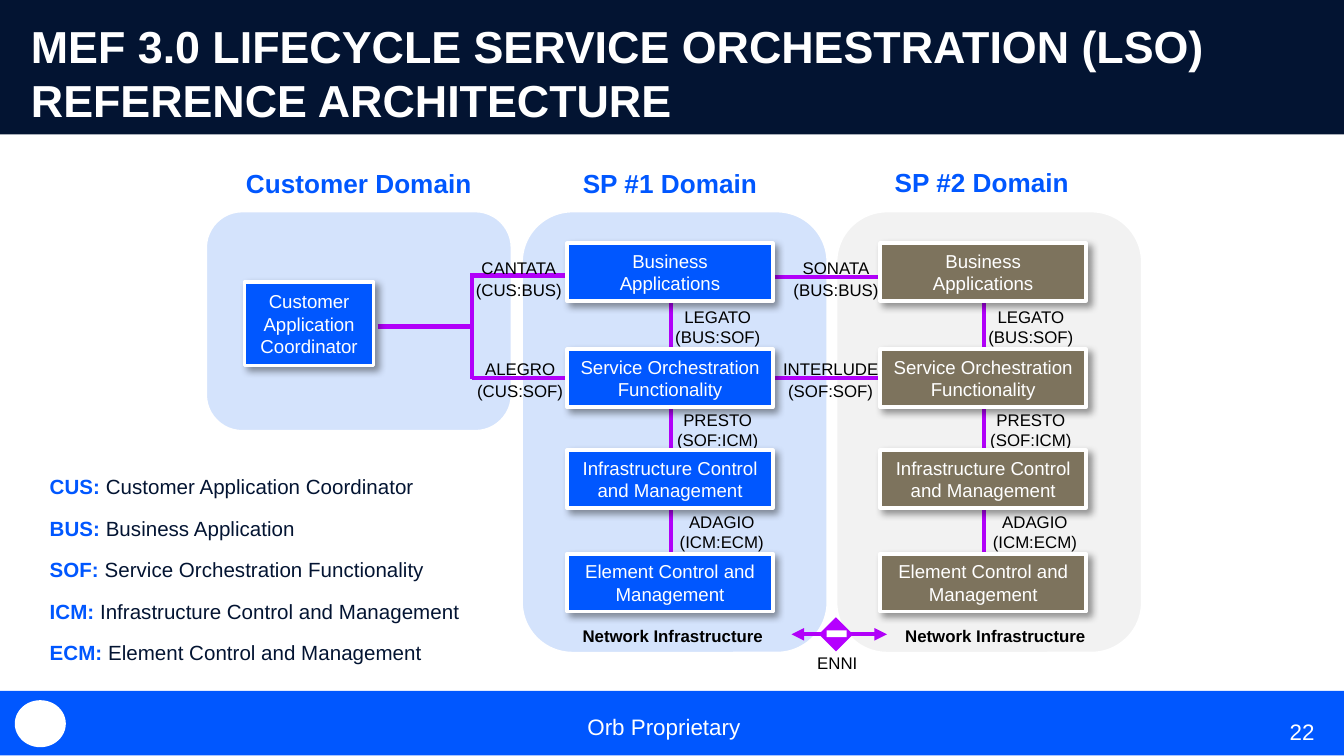
"""Build the LSO reference architecture slide."""
from lxml import etree
from pptx import Presentation
from pptx import util as u
from pptx.dml.color import RGBColor
from pptx.enum import shapes, text
from pptx.oxml import ns

BLUE, PALE, GREY, TAUPE = "0057FF", "D4E3FC", "F2F2F2", "7D735D"
NAVY, PURPLE, WHITE, BLACK = "031432", "B100F9", "FFFFFF", "000000"
LEFT, CENTER, RIGHT = text.PP_ALIGN.LEFT, text.PP_ALIGN.CENTER, text.PP_ALIGN.RIGHT
RECT, ROUND, OVAL = (shapes.MSO_SHAPE.RECTANGLE, shapes.MSO_SHAPE.ROUNDED_RECTANGLE,
                     shapes.MSO_SHAPE.OVAL)

TITLE = "MEF 3.0 LIFECYCLE SERVICE ORCHESTRATION (LSO) REFERENCE ARCHITECTURE"
FOOTER, PAGE = "Orb Proprietary", "22"
PANELS = [(6.22, 3.29, GREY), (3.88, 3.29, PALE), (1.53, 1.64, PALE)]
HEADINGS = [("Customer Domain", 1.64, 1.2, 2.06), ("SP #1 Domain", 4.1, 1.2, 1.77),
            ("SP #2 Domain", 6.42, 1.19, 1.77)]
PROVIDERS = [(4.22, BLUE), (6.55, TAUPE)]
LAYERS = [("Business Applications", 1.81), ("Service Orchestration Functionality", 2.6),
          ("Infrastructure Control and Management", 3.35),
          ("Element Control and Management", 4.12)]
VERTICAL_APIS = [("LEGATO", "(BUS:SOF)", 0.67, 2.23), ("PRESTO", "(SOF:ICM)", 0.67, 3),
                 ("ADAGIO", "(ICM:ECM)", 0.7, 3.76)]
CROSS_APIS = [("CANTATA", "(CUS:BUS)", 3.41, 1.85, 0.9), ("ALEGRO", "(CUS:SOF)", 3.42, 2.6, 0.9),
              ("SONATA", "(BUS:BUS)", 5.77, 1.85, 0.9),
              ("INTERLUDE", "(SOF:SOF)", 5.69, 2.6, 0.98)]
LINKS = [(5.75, 2.06, 6.57, 2.06), (5.75, 2.81, 6.58, 2.81), (2.81, 2.43, 3.52, 2.43),
         (3.51, 2.03, 3.51, 2.82), (3.5, 2.05, 4.21, 2.05), (3.51, 2.81, 4.22, 2.81)]
NETWORKS = [4.12, 6.52]
LEGEND = [("CUS: ", "Customer Application Coordinator"), ("BUS: ", "Business Application"),
          ("SOF: ", "Service Orchestration Functionality"),
          ("ICM: ", "Infrastructure Control and Management"),
          ("ECM: ", "Element Control and Management")]


def rgb(value):
    """Turn a hex string into a colour."""
    return RGBColor.from_string(value)


def add_run(p, words, size, color, bold=False):
    """Add one formatted run."""
    r = p.add_run()
    r.text = words
    r.font.color.rgb = rgb(color)
    for name, value in {"name": "Arial", "size": u.Pt(size), "bold": bold}.items():
        setattr(r.font, name, value)


def write(s, lines, size, color, bold=False, align=CENTER, anchor=text.MSO_ANCHOR.TOP,
          insets=(0.1, 0.05, 0.1, 0.05), **spacing):
    """Write lines, each a string or a list of (words, colour, bold) runs."""
    tf = s.text_frame
    tf.word_wrap, tf.vertical_anchor = True, anchor
    for side, gap in zip(("left", "top", "right", "bottom"), insets):
        setattr(tf, f"margin_{side}", u.Inches(gap))
    for i, line in enumerate(lines):
        p = tf.add_paragraph() if i else tf.paragraphs[0]
        for name, value in {"alignment": align, **spacing}.items():
            setattr(p, name, value)
        for run in [(line, color, bold)] if isinstance(line, str) else line:
            add_run(p, run[0], size, run[1], run[2])


def add_text(slide, box, lines, size, color=BLACK, **style):
    """Add a text box."""
    write(slide.shapes.add_textbox(*map(u.Inches, box)), lines, size, color, **style)


def add_block(slide, kind, box, fill, line=None, width=1.5):
    """Add a filled preset shape."""
    s = slide.shapes.add_shape(kind, *map(u.Inches, box))
    s.shadow.inherit = False
    s.fill.solid()
    s.fill.fore_color.rgb = rgb(fill)
    if line:
        s.line.color.rgb, s.line.width = rgb(line), u.Pt(width)
    else:
        s.line.fill.background()
    return s


def add_card(slide, box, lines, fill):
    """Add a labelled box with a drop shadow."""
    s = add_block(slide, RECT, box, fill, WHITE, 2)
    effects = s._element.spPr.find(ns.qn("a:effectLst"))
    shadow = etree.SubElement(effects, ns.qn("a:outerShdw"), blurRad=str(u.Pt(4)),
                              dist=str(u.Pt(3)), dir="2700000", algn="tl", rotWithShape="0")
    tint = etree.SubElement(shadow, ns.qn("a:srgbClr"), val=BLACK)
    etree.SubElement(tint, ns.qn("a:alpha"), val="40000")
    write(s, lines, 10, WHITE, anchor=text.MSO_ANCHOR.MIDDLE)


def add_link(slide, ends, arrows=False):
    """Add a purple line, with arrowheads at both ends if asked."""
    s = slide.shapes.add_connector(shapes.MSO_CONNECTOR.STRAIGHT, *map(u.Inches, ends))
    s.line.color.rgb, s.line.width = rgb(PURPLE), u.Pt(2.25)
    if arrows:
        for tag in ("a:headEnd", "a:tailEnd"):
            etree.SubElement(s.line._get_or_add_ln(), ns.qn(tag), type="triangle")
    etree.SubElement(s._element.spPr, ns.qn("a:effectLst"))


def add_provider(slide, left, fill):
    """Add one provider's column of layers and the interfaces between them."""
    for name, code, shift, top in VERTICAL_APIS:
        add_text(slide, (left + shift, top, 0.9, 0.4), [name, code], 9)
    add_link(slide, (left + 0.77, 2.23, left + 0.77, 4.2))
    for name, top in LAYERS:
        add_card(slide, (left, top, 1.53, 0.43), [name], fill)


def main():
    """Assemble and save the slide."""
    prs = Presentation()
    prs.slide_width = u.Inches(10)
    prs.slide_height = prs.slide_width * 9 // 16
    slide = prs.slides.add_slide(prs.slide_layouts[6])

    add_block(slide, RECT, (0, 5.14, 10, 0.48), BLUE)
    add_block(slide, OVAL, (0.11, 5.21, 0.38, 0.35), WHITE)
    add_text(slide, (3.9, 5.26, 2.08, 0.3), [FOOTER], 12, WHITE)
    add_text(slide, (7.55, 5.29, 2.33, 0.3), [PAGE], 12, WHITE, align=RIGHT,
             anchor=text.MSO_ANCHOR.MIDDLE)
    add_block(slide, RECT, (0, 0, 10, 1), NAVY)
    add_text(slide, (0.23, 0.09, 9.39, 0.91), [TITLE], 24, WHITE, bold=True, align=LEFT,
             insets=(0, 0.05, 0.1, 0.05))

    for left, height, fill in PANELS:
        add_block(slide, ROUND, (left, 1.57, 2.28, height), fill, WHITE)
    for name, left, top, width in HEADINGS:
        add_text(slide, (left, top, width, 0.34), [name], 14, BLUE, bold=True)
    for ends in LINKS:
        add_link(slide, ends)
    for name, code, left, top, width in CROSS_APIS:
        add_text(slide, (left, top, width, 0.42), [name, code], 9, line_spacing=u.Pt(12))
    add_card(slide, (1.82, 2.1, 0.96, 0.62), ["Customer", "Application", "Coordinator"], BLUE)
    for left, fill in PROVIDERS:
        add_provider(slide, left, fill)

    for left in NETWORKS:
        add_text(slide, (left, 4.61, 1.77, 0.25), ["Network Infrastructure"], 9, bold=True)
    add_text(slide, (5.74, 4.81, 0.98, 0.25), ["ENNI"], 9)
    add_link(slide, (5.89, 4.72, 6.6, 4.72), arrows=True)
    add_block(slide, RECT, (6.13, 4.63, 0.18, 0.18), "B500FF").rotation = 315
    add_block(slide, RECT, (6.15, 4.69, 0.15, 0.05), WHITE)
    add_text(slide, (0.37, 3.53, 3.29, 1.43),
             [[(code, BLUE, True), (name, NAVY, False)] for code, name in LEGEND], 11,
             align=LEFT, insets=(0, 0, 0, 0), space_before=u.Pt(9))
    prs.save("out.pptx")


if __name__ == "__main__":
    main()
